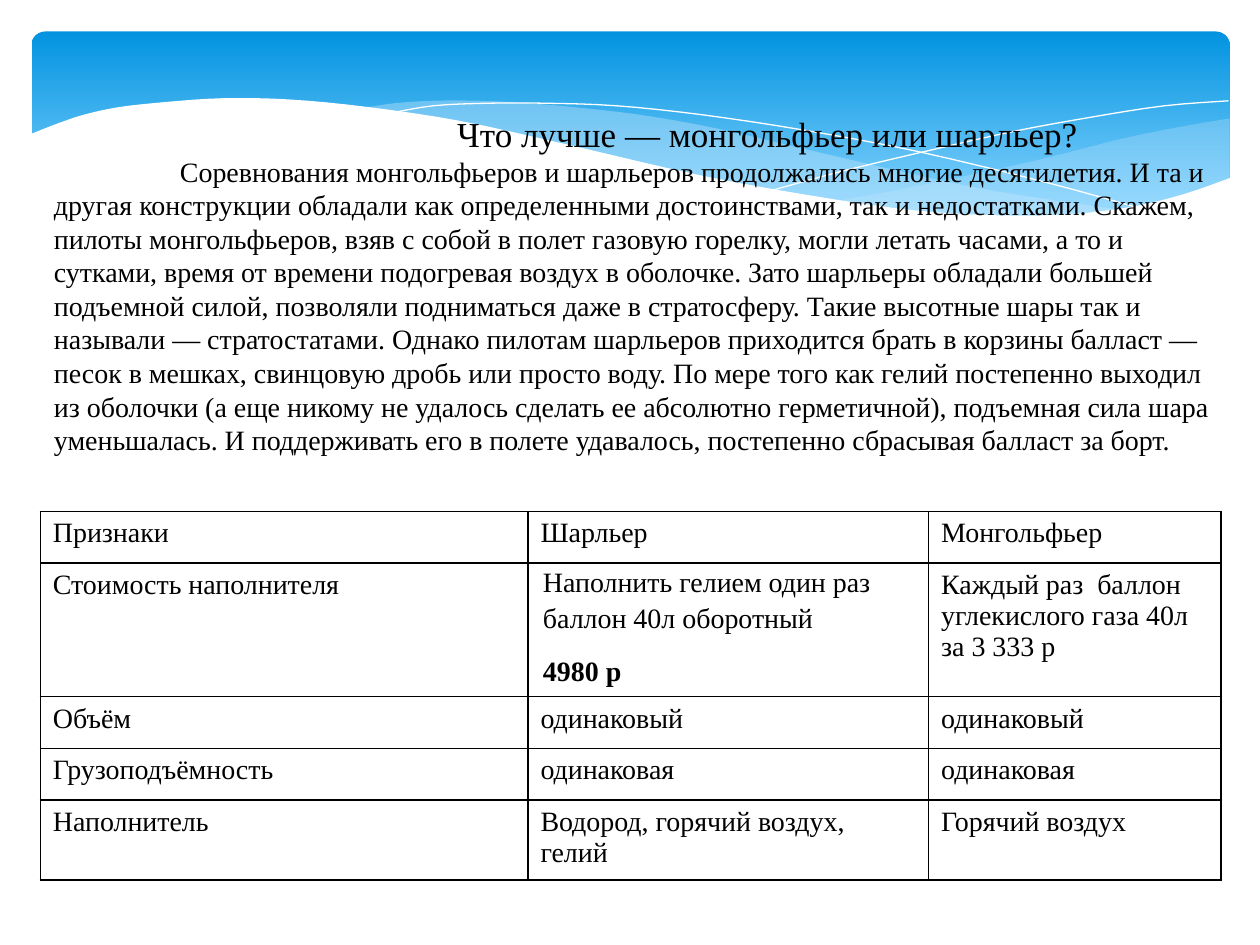
"""Build a slide comparing two kinds of balloon: text over a wave banner and a table."""
from lxml import etree
from pptx import Presentation
from pptx.dml.color import RGBColor
from pptx.enum.shapes import MSO_SHAPE
from pptx.oxml.ns import qn
from pptx.util import Inches, Pt

ROUNDED = MSO_SHAPE.ROUNDED_RECTANGLE
FONT = "Times New Roman"
COLORS = {"sky": "0293E0", "haze": "83D3FE", "wave": "C6E7FC", "white": "FFFFFF", "ink": "000000"}

BANNER = (0.25, 0.25, 9.51, 1.56)
RIGHT_WAVE = [
    [(9.76, 0.94), (9.35, 1.01), (8.91, 1.1), (8.32, 1.25), (7.79, 1.37), (7.06, 1.52), (6.61, 1.6)],
    [(6.61, 1.6), (7.05, 1.65), (7.57, 1.7), (8.03, 1.72), (8.44, 1.71), (8.81, 1.67), (9.21, 1.6),
     (9.49, 1.52), (9.76, 1.41)],
]
MIDDLE_WAVE = [
    [(8.93, 1.67), (8.37, 1.59), (7.75, 1.49), (7.06, 1.34), (6.29, 1.16), (5.69, 1.02), (5.14, 0.92),
     (4.65, 0.86), (4.2, 0.82), (3.8, 0.8), (3.44, 0.8), (3.13, 0.82), (2.86, 0.86)],
    [(2.86, 0.86), (3.42, 0.94), (4.04, 1.06), (4.91, 1.26), (5.66, 1.43), (6.34, 1.56), (6.95, 1.65),
     (7.48, 1.7), (7.96, 1.73), (8.38, 1.72), (8.93, 1.67)],
]
FRONT_WAVE = [
    [(9.77, 1.41), (9.4, 1.54), (8.99, 1.64), (8.5, 1.7), (7.93, 1.71), (7.26, 1.67), (6.48, 1.56),
     (5.55, 1.39), (4.47, 1.14), (3.65, 0.96), (2.92, 0.85), (2.3, 0.79), (1.77, 0.78), (1.32, 0.81),
     (0.95, 0.85), (0.67, 0.91), (0.46, 0.98), (0.23, 1.07)],
    [(0.23, 2.24), (9.77, 2.24)],
]
FALLING_LINE = [
    [(3.09, 0.9), (3.44, 0.84), (3.87, 0.82), (4.33, 0.82), (4.89, 0.84), (5.56, 0.91), (6.36, 1.03),
     (7.27, 1.2), (8.31, 1.45), (9.07, 1.66)],
]
RISING_LINE = [
    [(6.13, 1.51), (6.72, 1.35), (7.48, 1.17), (8.06, 1.04), (8.66, 0.93), (9.24, 0.84), (9.75, 0.8)],
]
WAVES = [
    (RIGHT_WAVE, "wave", 29), (MIDDLE_WAVE, "wave", 40), (FALLING_LINE, None, 100),
    (RISING_LINE, None, 100), (FRONT_WAVE, "white", 100),
]

TEXT_BOX = (0.33, 0.84, 9.39, 3.13)
PARAGRAPHS = [
    ("Что лучше — монгольфьер или шарльер?", 20, 3.2),
    ("Соревнования монгольфьеров и шарльеров продолжались многие десятилетия. И та и другая "
     "конструкции обладали как определенными достоинствами, так и недостатками. Скажем, пилоты "
     "монгольфьеров, взяв с собой в полет газовую горелку, могли летать часами, а то и сутками, "
     "время от времени подогревая воздух в оболочке. Зато шарльеры обладали большей подъемной "
     "силой, позволяли подниматься даже в стратосферу. Такие высотные шары так и называли — "
     "стратостатами. Однако пилотам шарльеров приходится брать в корзины балласт — песок в мешках, "
     "свинцовую дробь или просто воду. По мере того как гелий постепенно выходил из оболочки (а еще "
     "никому не удалось сделать ее абсолютно герметичной), подъемная сила шара уменьшалась. И "
     "поддерживать его в полете удавалось, постепенно сбрасывая балласт за борт.", 16, 1),
]

TABLE_ORIGIN = (0.32, 4.06)
COLUMNS = [3.87, 3.18, 2.32]
ROW_HEIGHTS = [0.41, 1.06, 0.41, 0.41, 0.63]
PRICE = ["Наполнить гелием один раз баллон 40л оборотный", "4980 р"]
ROWS = [
    ["Признаки", "Шарльер", "Монгольфьер"],
    ["Стоимость наполнителя", PRICE, "Каждый раз  баллон углекислого газа 40л за 3 333 р"],
    ["Объём", "одинаковый", "одинаковый"],
    ["Грузоподъёмность", "одинаковая", "одинаковая"],
    ["Наполнитель", "Водород, горячий воздух, гелий", "Горячий воздух"],
]


def color(name):
    return RGBColor.from_string(COLORS[name])


def smooth(points, steps=4):
    """Return a Catmull-Rom curve through the points."""
    padded = [points[0], *points, points[-1]]
    curve = [points[0]]
    for a, b, c, d in zip(padded, padded[1:], padded[2:], padded[3:]):
        for step in range(1, steps + 1):
            t = step / steps
            curve.append(tuple(
                (2 * q + (r - p) * t + (2 * p - 5 * q + 4 * r - s) * t**2
                 + (3 * q - p - 3 * r + s) * t**3) / 2
                for p, q, r, s in zip(a, b, c, d)))
    return curve


def add_run(paragraph, text, size, bold=False):
    run = paragraph.add_run()
    run.text = text
    run.font.name = FONT
    run.font.size = Pt(size)
    run.font.bold = bold
    run.font.color.rgb = color("ink")


def add_banner(slide):
    banner = slide.shapes.add_shape(ROUNDED, *map(Inches, BANNER))
    banner.adjustments[0] = 0.07
    banner.shadow.inherit = False
    banner.line.fill.background()
    banner.fill.gradient()
    banner.fill.gradient_angle = 270
    for stop, name, position in zip(banner.fill.gradient_stops, ("sky", "haze"), (0, 0.9)):
        stop.color.rgb = color(name)
        stop.position = position


def add_wave(slide, curves, fill, opacity):
    points = [(Inches(x), Inches(y)) for curve in curves for x, y in smooth(curve)]
    builder = slide.shapes.build_freeform(*points[0])
    builder.add_line_segments(points[1:], close=fill is not None)
    wave = builder.convert_to_shape()
    wave.shadow.inherit = False
    if fill is None:
        wave.fill.background()
        wave.line.color.rgb = color("white")
        wave.line.width = Pt(0)
        return
    wave.line.fill.background()
    wave.fill.solid()
    wave.fill.fore_color.rgb = color(fill)
    if opacity < 100:
        tint = wave.fill._xPr.find(".//" + qn("a:srgbClr"))
        etree.SubElement(tint, qn("a:alpha"), val=str(opacity * 1000))


def add_text(slide):
    frame = slide.shapes.add_textbox(*map(Inches, TEXT_BOX)).text_frame
    frame.word_wrap = True
    for index, (text, size, indent) in enumerate(PARAGRAPHS):
        paragraph = frame.add_paragraph() if index else frame.paragraphs[0]
        paragraph._p.get_or_add_pPr().set("indent", str(Inches(indent)))
        add_run(paragraph, text, size)


def add_borders(cell):
    properties = cell._tc.get_or_add_tcPr()
    for position, side in enumerate(("a:lnL", "a:lnR", "a:lnT", "a:lnB")):
        border = etree.Element(qn(side), w=str(Pt(1)))
        solid = etree.SubElement(border, qn("a:solidFill"))
        etree.SubElement(solid, qn("a:srgbClr"), val=COLORS["ink"])
        properties.insert(position, border)


def fill_cell(cell, content):
    cell.fill.background()
    add_borders(cell)
    if isinstance(content, str):
        add_run(cell.text_frame.paragraphs[0], content, 16)
        return
    cell.margin_left = cell.margin_right = Inches(0.12)
    cell.margin_top = cell.margin_bottom = 0
    for index, text in enumerate(content):
        paragraph = cell.text_frame.add_paragraph() if index else cell.text_frame.paragraphs[0]
        paragraph.line_spacing = 1.15
        paragraph.space_after = Pt(10)
        add_run(paragraph, text, 16, bold=index > 0)


def add_comparison(slide):
    size = (sum(COLUMNS), sum(ROW_HEIGHTS))
    table = slide.shapes.add_table(len(ROWS), len(COLUMNS), *map(Inches, TABLE_ORIGIN + size)).table
    table.first_row = table.horz_banding = False
    for column, width in zip(table.columns, COLUMNS):
        column.width = Inches(width)
    for row, height, contents in zip(table.rows, ROW_HEIGHTS, ROWS):
        row.height = Inches(height)
        for cell, content in zip(row.cells, contents):
            fill_cell(cell, content)


def main():
    presentation = Presentation()
    presentation.slide_width, presentation.slide_height = Inches(10), Inches(7.5)
    slide = presentation.slides.add_slide(presentation.slide_layouts[6])
    add_banner(slide)
    for curves, fill, opacity in WAVES:
        add_wave(slide, curves, fill, opacity)
    add_text(slide)
    add_comparison(slide)
    presentation.save("out.pptx")


if __name__ == "__main__":
    main()
